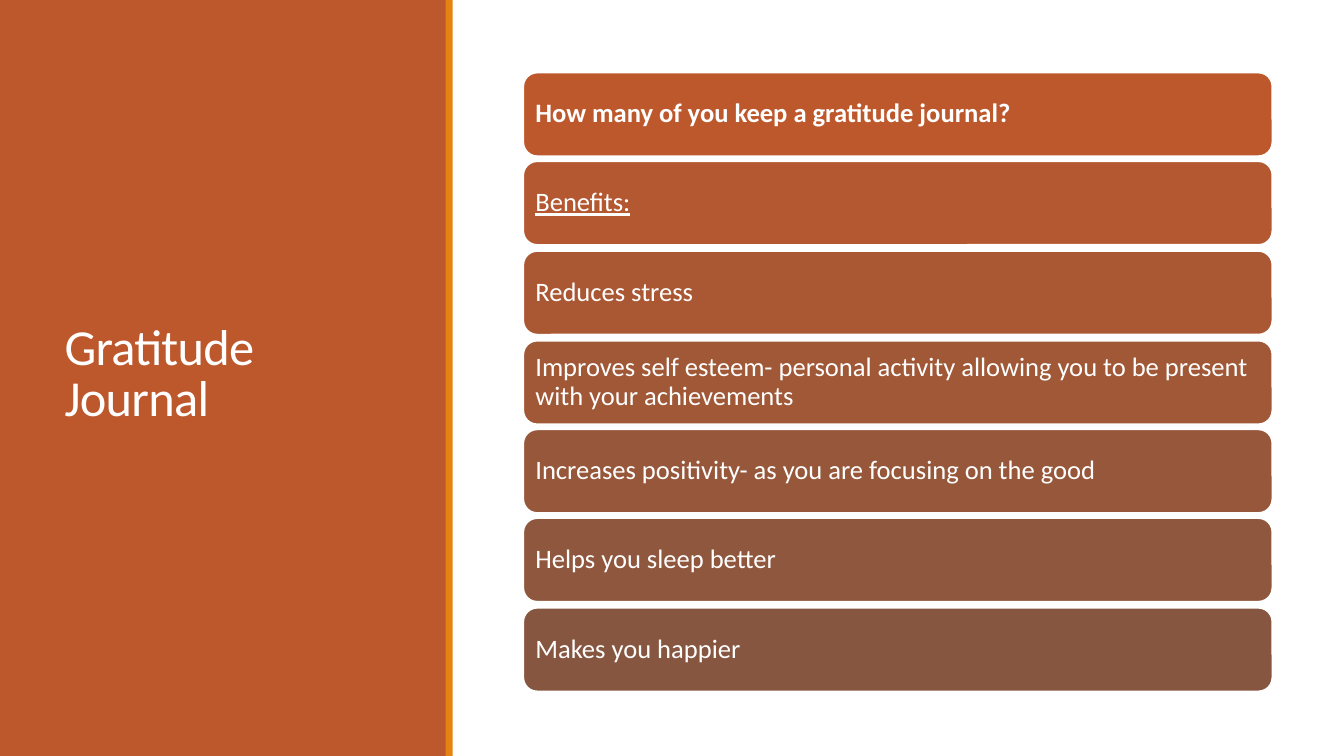
from pptx import Presentation
from pptx import util as u
from pptx.dml.color import RGBColor
from pptx.enum import shapes, text

PX = 9144  # EMU per px, 100 px to the inch


def paint(colour_format, colour):
    """Set a fill or a line fill to one solid colour."""
    colour_format.solid()
    colour_format.fore_color.rgb = RGBColor.from_string(colour)


def add_block(kind, left, top, width, height, colour):
    block = slide.shapes.add_shape(
        kind, left * PX, top * PX, width * PX, height * PX)
    block.shadow.inherit = False
    paint(block.fill, colour)
    block.line.fill.background()
    return block


deck = Presentation()
deck.slide_width, deck.slide_height = 1333 * PX, 750 * PX
slide = deck.slides.add_slide(deck.slide_layouts[5])

# Left panel and its accent stripe
add_block(shapes.MSO_SHAPE.RECTANGLE, 0, 0, 443, 750, "BD582C")
add_block(shapes.MSO_SHAPE.RECTANGLE, 442, 0, 7, 750, "E48312")

# Title, brought in front of the panel
title = slide.shapes.title
title.left, title.top, title.width, title.height = (
    54 * PX, 57 * PX, 337 * PX, 631 * PX)
title.element.getparent().append(title.element)
heading = title.text_frame
heading.text = "Gratitude Journal"
heading.word_wrap = True
heading.auto_size = text.MSO_AUTO_SIZE.NONE
heading.vertical_anchor = text.MSO_ANCHOR.MIDDLE
heading_line = heading.paragraphs[0]
heading_line.alignment = text.PP_ALIGN.LEFT
heading_line.line_spacing = 0.85
heading_run = heading_line.runs[0]
heading_run.font.size = u.Pt(36)
heading_run.font.name = "Calibri"
paint(heading_run.font.fill, "FFFFFF")
heading_run.font._element.set("spc", "-50")

# Question and benefits, one bar each
points = [
    ("How many of you keep a gratitude journal?", "BD582C"),
    ("Benefits:", "B35830"),
    ("Reduces stress", "AA5834"),
    ("Improves self esteem- personal activity allowing you to be present "
     "with your achievements", "A05837"),
    ("Increases positivity- as you are focusing on the good", "97573A"),
    ("Helps you sleep better", "8F573D"),
    ("Makes you happier", "865640"),
]
first_top, last_top = 72, 603
for row, (wording, colour) in enumerate(points):
    top = round(first_top + row * (last_top - first_top) / (len(points) - 1))
    bar = add_block(shapes.MSO_SHAPE.ROUNDED_RECTANGLE,
                    519, top, 743, 83, colour)
    paint(bar.line.fill, "FFFFFF")
    bar.line.width = u.Pt(1.25)
    frame = bar.text_frame
    frame.text = wording
    frame.word_wrap = True
    frame.vertical_anchor = text.MSO_ANCHOR.MIDDLE
    frame.margin_left = frame.margin_right = 8 * PX
    frame.margin_top = frame.margin_bottom = 8 * PX
    point = frame.paragraphs[0]
    point.alignment = text.PP_ALIGN.LEFT
    point.line_spacing = 0.9
    font = point.runs[0].font
    font.size = u.Pt(19)
    font.name = "Calibri"
    font.bold = row == 0
    font.underline = wording == "Benefits:"
    paint(font.fill, "FFFFFF")

deck.save("out.pptx")
